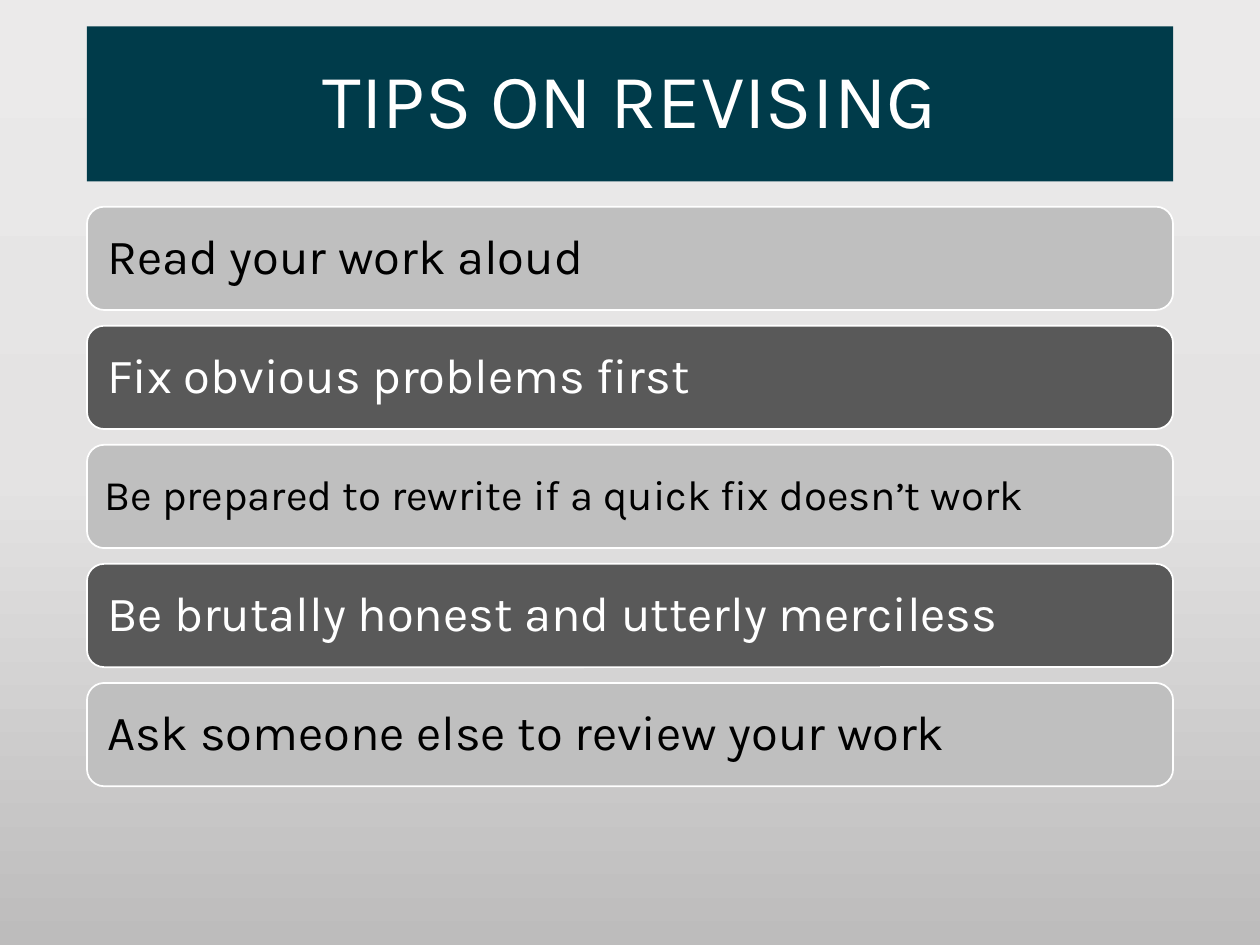
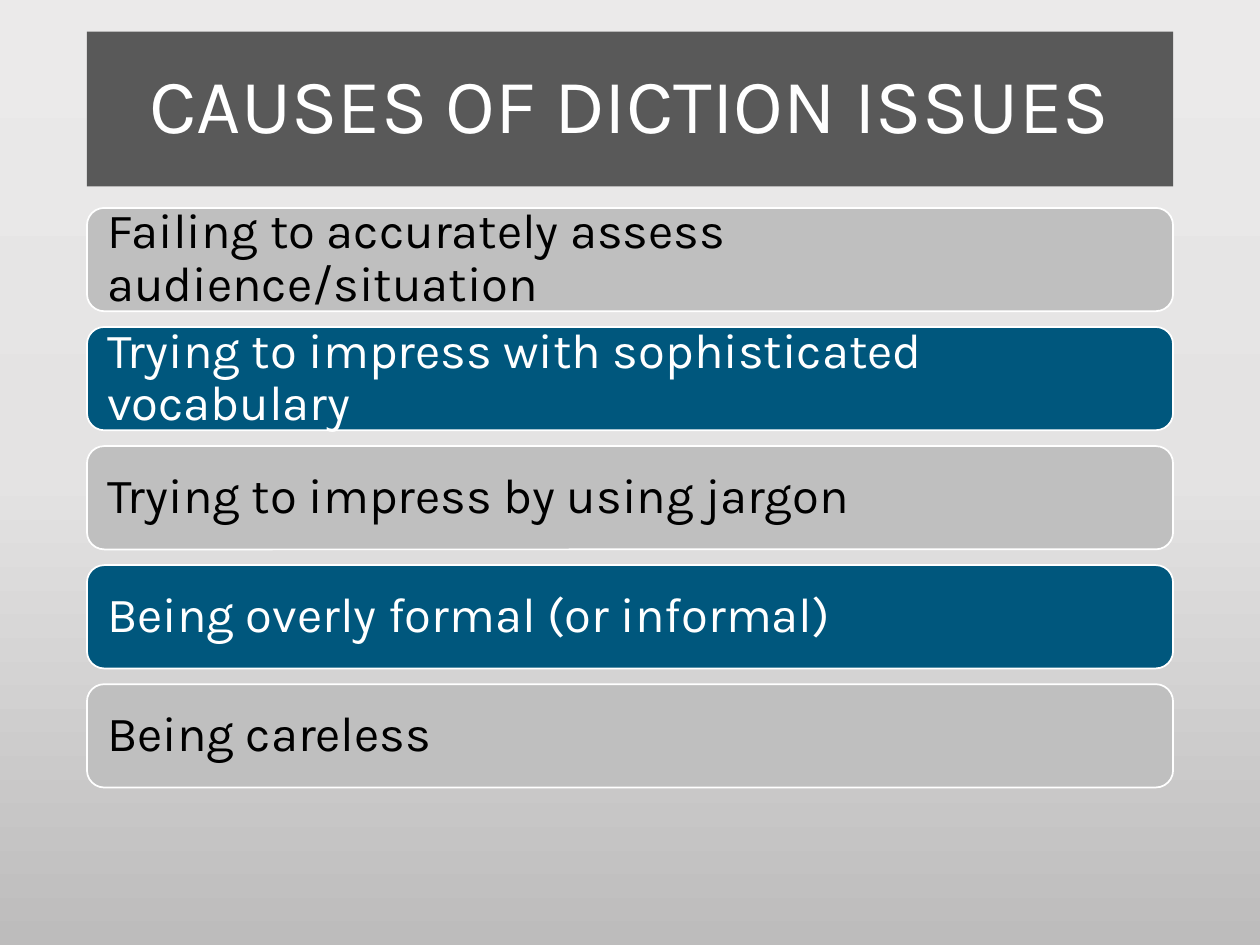
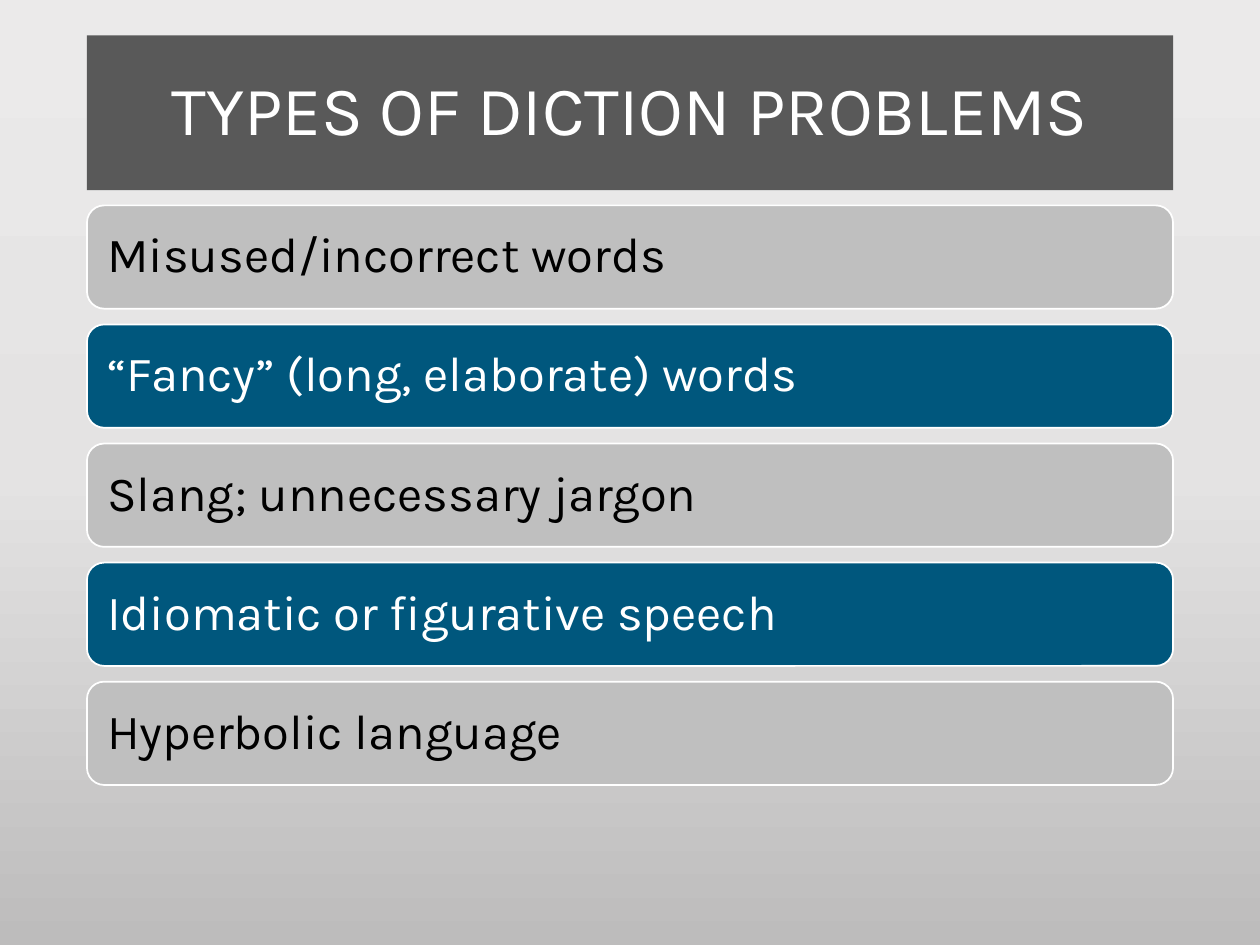
from copy import deepcopy

from pptx import Presentation
from pptx.dml.color import RGBColor
from pptx.enum.shapes import MSO_SHAPE as Shape
from pptx.enum.text import MSO_ANCHOR as Anchor, MSO_AUTO_SIZE as AutoSize, PP_ALIGN as Align
from pptx.util import Inches, Pt

# Shared style
FONT = "Karla"
WHITE, BLACK = "FFFFFF", "000000"
SILVER, GRAPHITE = "BFBFBF", "595959"
TEAL, BLUE = "003B4A", "00577D"
BACKGROUND = [(0, "EBEAEA"), (0.5, "E4E3E3"), (1, "BDBCBC")]
TITLE_ONLY = 5

# Shared layout, in inches
LEFT, WIDTH = 0.69, 8.62
TITLE_HEIGHT = 1.23
LIST_HEIGHT, BAR_HEIGHT = 4.6, 0.82


def color(value):
    return RGBColor.from_string(value)


class Deck:
    def __init__(self):
        self.presentation = Presentation()
        self.presentation.slide_width = Inches(10)
        self.presentation.slide_height = Inches(7.5)
        self.slide = None
        self.set_background()

    def set_background(self):
        """Give every slide the vertical gradient through the master."""
        master = self.presentation.slide_master
        fill = master.background.fill
        fill.gradient()
        fill.gradient_angle = 270
        stop_list = master.element.xpath("./p:cSld/p:bg//a:gsLst")[0]
        stop_list.append(deepcopy(stop_list[-1]))
        for stop, (position, value) in zip(fill.gradient_stops, BACKGROUND):
            stop.position = position
            stop.color.rgb = color(value)

    def add_slide(self):
        layout = self.presentation.slide_layouts[TITLE_ONLY]
        self.slide = self.presentation.slides.add_slide(layout)

    def paint(self, shape, value):
        shape.fill.solid()
        shape.fill.fore_color.rgb = color(value)

    def set_text(self, shape, text, size, value, align):
        frame = shape.text_frame
        frame.text = text
        frame.word_wrap = True
        frame.auto_size = AutoSize.NONE
        frame.vertical_anchor = Anchor.MIDDLE
        paragraph = frame.paragraphs[0]
        paragraph.alignment = align
        paragraph.line_spacing = 0.9
        font = paragraph.font
        font.name, font.size = FONT, Pt(size)
        font.color.rgb = color(value)

    def title(self, text, top, fill, size=44):
        shape = self.slide.shapes.title
        shape.left, shape.top = Inches(LEFT), Inches(top)
        shape.width, shape.height = Inches(WIDTH), Inches(TITLE_HEIGHT)
        self.paint(shape, fill)
        self.set_text(shape, text, size, WHITE, Align.CENTER)

    def bar(self, text, top, fill, text_color, size, inset):
        shape = self.slide.shapes.add_shape(
            Shape.ROUNDED_RECTANGLE,
            Inches(LEFT), Inches(top), Inches(WIDTH), Inches(BAR_HEIGHT))
        shape.shadow.inherit = False
        self.paint(shape, fill)
        shape.line.color.rgb = color(WHITE)
        shape.line.width = Pt(1)
        frame = shape.text_frame
        frame.margin_left = frame.margin_right = Inches(inset)
        frame.margin_top = frame.margin_bottom = Inches(inset)
        self.set_text(shape, text, size, text_color, Align.LEFT)

    def bar_list(self, items, top, accent, small=()):
        """Stack evenly spaced bars, alternating silver and the accent."""
        pitch = (LIST_HEIGHT - BAR_HEIGHT) / (len(items) - 1)
        for index, text in enumerate(items):
            fill, text_color = (accent, WHITE) if index % 2 else (SILVER, BLACK)
            size, inset = (24, 0.1) if text in small else (28, 0.12)
            self.bar(text, top + index * pitch, fill, text_color, size, inset)


def main():
    deck = Deck()

    # Tips on revising
    rewrite_tip = "Be prepared to rewrite if a quick fix doesn’t work"
    deck.add_slide()
    deck.title("TIPS ON REVISING", 0.21, TEAL)
    deck.bar_list([
        "Read your work aloud",
        "Fix obvious problems first",
        rewrite_tip,
        "Be brutally honest and utterly merciless",
        "Ask someone else to review your work",
    ], 1.64, GRAPHITE, small=[rewrite_tip])

    # Causes of diction issues
    deck.add_slide()
    deck.title("CAUSES OF DICTION ISSUES", 0.25, GRAPHITE)
    deck.bar_list([
        "Failing to accurately assess audience/situation",
        "Trying to impress with sophisticated vocabulary",
        "Trying to impress by using jargon",
        "Being overly formal (or informal)",
        "Being careless",
    ], 1.65, BLUE)

    # Types of diction problems
    deck.add_slide()
    deck.title("TYPES OF DICTION PROBLEMS", 0.28, GRAPHITE, size=39.6)
    deck.bar_list([
        "Misused/incorrect words",
        "“Fancy” (long, elaborate) words",
        "Slang; unnecessary jargon",
        "Idiomatic or figurative speech",
        "Hyperbolic language",
    ], 1.63, BLUE)

    deck.presentation.save("out.pptx")


if __name__ == "__main__":
    main()
